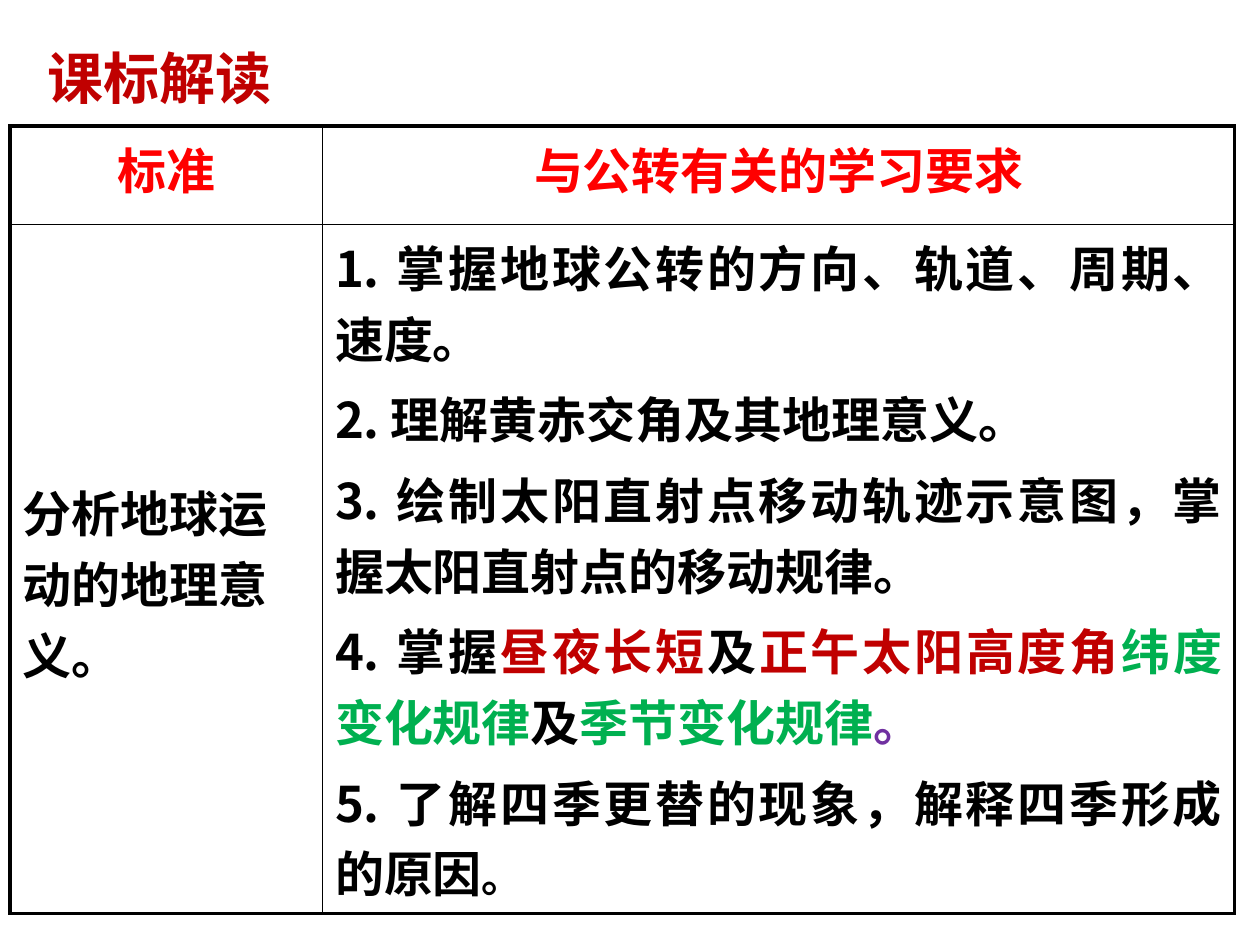
from typing import NamedTuple

from lxml import etree
from pptx import Presentation
from pptx.dml.color import RGBColor
from pptx.enum.text import MSO_ANCHOR, PP_ALIGN
from pptx.oxml.ns import qn
from pptx.util import Inches, Pt

LEFT, CENTER, JUSTIFY = PP_ALIGN.LEFT, PP_ALIGN.CENTER, PP_ALIGN.JUSTIFY
MIDDLE, TOP = MSO_ANCHOR.MIDDLE, MSO_ANCHOR.TOP
CJK_FONT, LATIN_FONT, TITLE_FONT = "Noto Sans CJK SC", "Times New Roman", "Calibri"
BLACK, RED, DARK_RED = "000000", "FF0000", "C00000"
GREEN, PURPLE = "00B050", "7030A0"
COLUMN_WIDTHS = (2.48, 7.24)
ROW_HEIGHTS = (0.78, 4.97)
OUTER_LINE, INNER_LINE = 2.25, 1


class Span(NamedTuple):
    text: str
    color: str = BLACK
    size: float = 28
    font: str = CJK_FONT


class CellContent(NamedTuple):
    paragraphs: list[list[Span]]
    alignment: PP_ALIGN
    top_margin: float = 0.05


HEADERS = [
    CellContent([[Span(text, RED, font=LATIN_FONT)]], CENTER)
    for text in ("标准", "与公转有关的学习要求")
]
STANDARD = CellContent([[Span("分析地球运动的地理意义。")]], LEFT, top_margin=2)
REQUIREMENTS = CellContent(
    [
        [Span("1. 掌握地球公转的方向、轨道、周期、速度。")],
        [Span("2. 理解黄赤交角及其地理意义。")],
        [Span("3. 绘制太阳直射点移动轨迹示意图，掌握太阳直射点的移动规律。")],
        [
            Span("4. 掌握"),
            Span("昼夜长短", DARK_RED),
            Span("及"),
            Span("正午太阳高度角", DARK_RED),
            Span("纬度变化规律", GREEN),
            Span("及"),
            Span("季节变化规律", GREEN),
            Span("。", PURPLE),
        ],
        [Span("5. 了解四季更替的现象，解释四季形成的原因"), Span("。", size=24)],
    ],
    JUSTIFY,
)
ROWS = [HEADERS, [STANDARD, REQUIREMENTS]]


def rgb(color: str) -> RGBColor:
    return RGBColor.from_string(color)


def add_text(paragraph, text: str, *, size: float, color: str, font: str) -> None:
    run = paragraph.add_run()
    run.text = text
    run.font.size = Pt(size)
    run.font.bold = True
    run.font.name = font
    run.font.color.rgb = rgb(color)
    east_asian = etree.SubElement(run.font._element, qn("a:ea"))
    east_asian.set("typeface", CJK_FONT)


def set_borders(cell, widths: dict[str, float]) -> None:
    properties = cell._tc.get_or_add_tcPr()
    for index, (side, width) in enumerate(widths.items()):
        line = etree.Element(qn(f"a:ln{side}"), w=str(Pt(width)))
        fill = etree.SubElement(line, qn("a:solidFill"))
        etree.SubElement(fill, qn("a:srgbClr"), val=BLACK)
        properties.insert(index, line)


def fill_cell(cell, content: CellContent) -> None:
    cell.fill.background()
    cell.vertical_anchor = TOP
    cell.margin_top = Inches(content.top_margin)
    frame = cell.text_frame
    for index, spans in enumerate(content.paragraphs):
        paragraph = frame.add_paragraph() if index else frame.paragraphs[0]
        paragraph.alignment = content.alignment
        paragraph.space_before = Pt(5.6)
        for span in spans:
            add_text(paragraph, span.text, size=span.size, color=span.color, font=span.font)


def add_title(slide, text: str) -> None:
    title = slide.shapes.title
    title.left, title.top = Inches(0.28), Inches(0.29)
    title.width, title.height = Inches(2.28), Inches(0.64)
    title.text_frame.vertical_anchor = MIDDLE
    paragraph = title.text_frame.paragraphs[0]
    paragraph.alignment = LEFT
    add_text(paragraph, text, size=32, color=DARK_RED, font=TITLE_FONT)


def add_standards_table(slide) -> None:
    table = slide.shapes.add_table(
        len(ROWS), len(COLUMN_WIDTHS), Inches(0.08), Inches(1),
        Inches(sum(COLUMN_WIDTHS)), Inches(sum(ROW_HEIGHTS)),
    ).table
    table.first_row = table.horz_banding = False
    for column, width in zip(table.columns, COLUMN_WIDTHS):
        column.width = Inches(width)
    for row, height in zip(table.rows, ROW_HEIGHTS):
        row.height = Inches(height)
    last_row, last_column = len(ROWS) - 1, len(COLUMN_WIDTHS) - 1
    for row_index, contents in enumerate(ROWS):
        for column_index, content in enumerate(contents):
            cell = table.cell(row_index, column_index)
            fill_cell(cell, content)
            outer_sides = {
                "L": column_index == 0,
                "R": column_index == last_column,
                "T": row_index == 0,
                "B": row_index == last_row,
            }
            set_borders(cell, {
                side: OUTER_LINE if outer else INNER_LINE
                for side, outer in outer_sides.items()
            })


def main() -> None:
    presentation = Presentation()
    presentation.slide_width, presentation.slide_height = Inches(10), Inches(7.5)
    slide = presentation.slides.add_slide(presentation.slide_layouts[5])
    add_standards_table(slide)
    add_title(slide, "课标解读")
    presentation.save("out.pptx")


if __name__ == "__main__":
    main()
